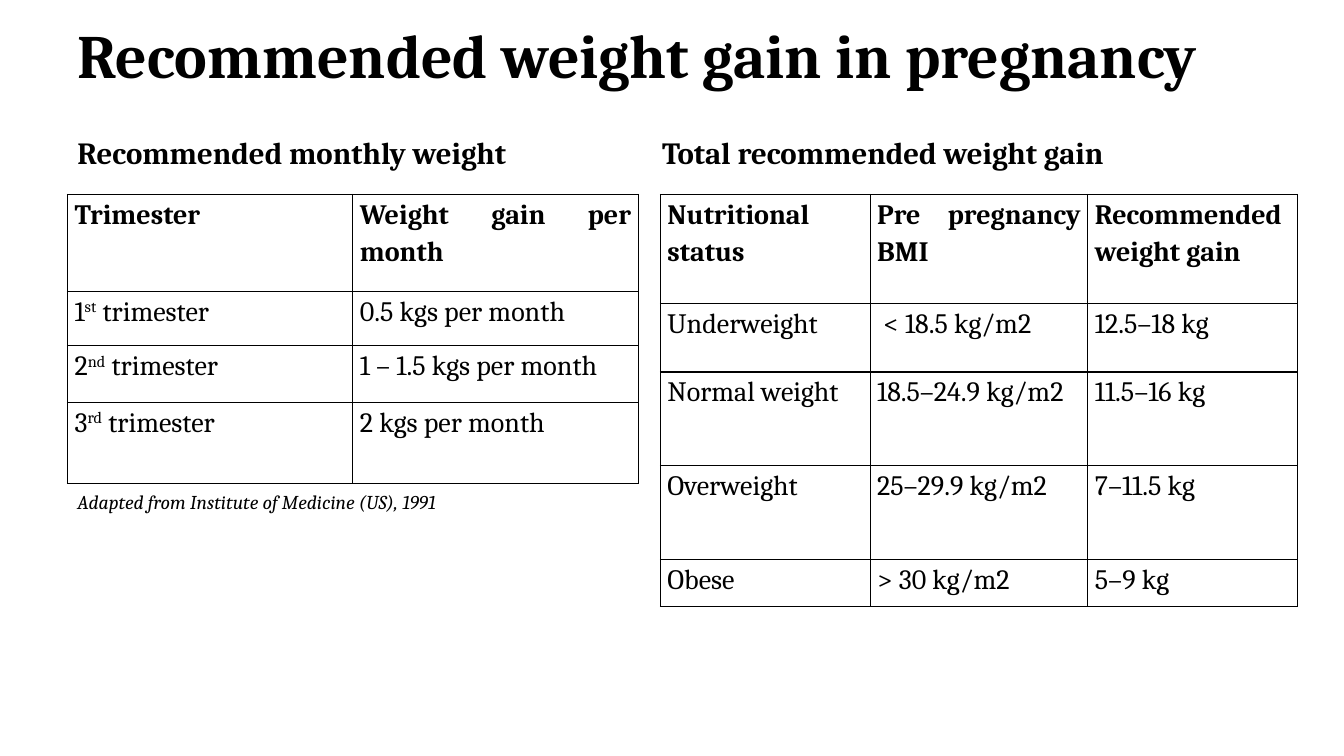
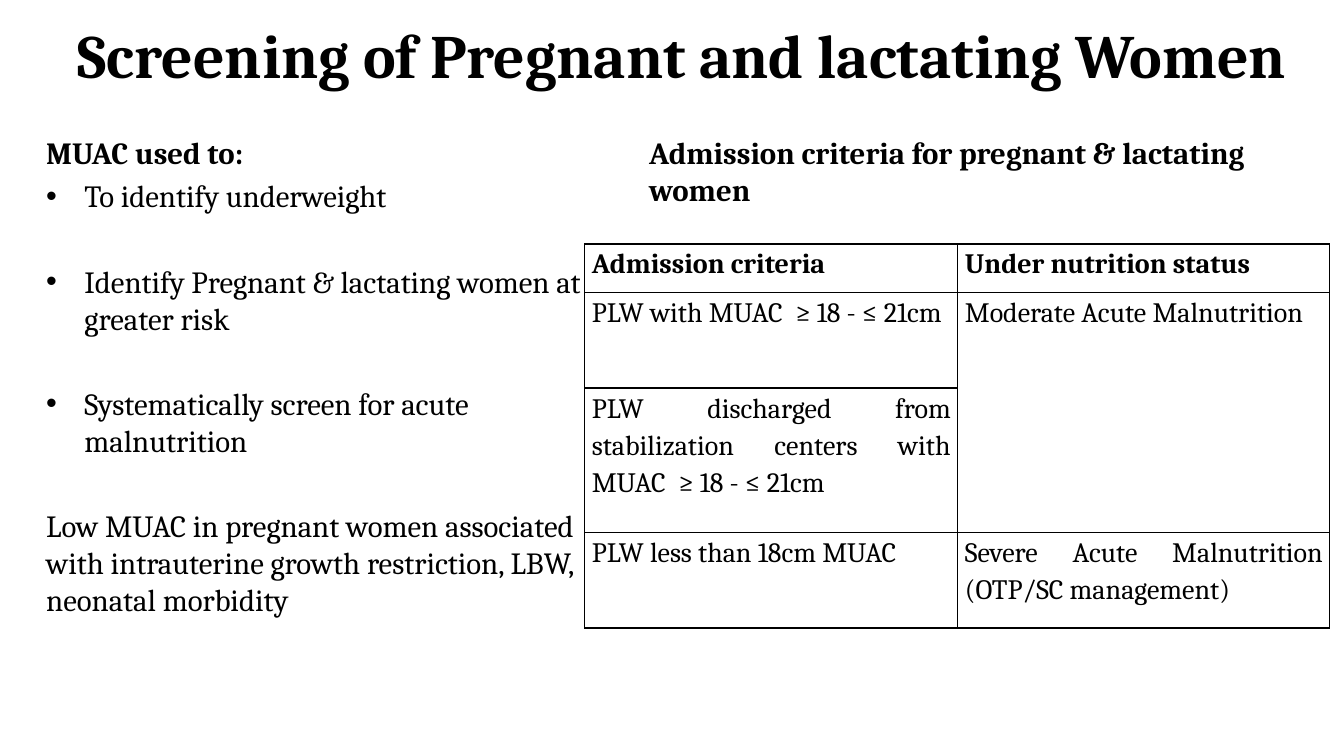
import dataclasses

import pptx
import pptx.dml.color
import pptx.enum.text
import pptx.oxml
import pptx.oxml.ns
import pptx.util

EMU_PER_PX = 9144


def px(length):
    return pptx.util.Emu(length * EMU_PER_PX)


@dataclasses.dataclass(frozen=True)
class Theme:
    font: str = "Cambria"
    ink: str = "000000"
    title_size: int = 44
    body_size: int = 22
    table_size: int = 20
    note_size: int = 14
    table_spacing: float = 1.15
    border_points: int = 1
    bullet_gap: float = 4.4
    wide_gap: float = 34.6
    indent: int = 38
    cell_margin: int = 7


class Deck:
    def __init__(self, theme):
        self.theme = theme
        self.presentation = pptx.Presentation()
        self.presentation.slide_width = px(1333)
        self.presentation.slide_height = px(750)
        self.slide = None

    def add_slide(self, title, title_width):
        self.slide = self.presentation.slides.add_slide(
            self.presentation.slide_layouts[6]
        )
        frame = self.text_frame(67, 21, title_width, 64)
        frame.vertical_anchor = pptx.enum.text.MSO_ANCHOR.MIDDLE
        self.set_text(frame.paragraphs[0], title, self.theme.title_size, bold=True)

    def text_frame(self, left, top, width, height):
        shape = self.slide.shapes.add_textbox(
            px(left), px(top), px(width), px(height)
        )
        shape.text_frame.word_wrap = True
        return shape.text_frame

    def set_text(self, paragraph, text, size, bold=False, italic=False):
        for index, part in enumerate(text.split("^")):
            run = paragraph.add_run()
            run.text = part
            if index % 2:
                run.font._element.set("baseline", "30000")
        font = paragraph.font
        font.name = self.theme.font
        font.size = pptx.util.Pt(size)
        font.bold = bold
        font.italic = italic
        font.color.rgb = pptx.dml.color.RGBColor.from_string(self.theme.ink)

    def heading(self, left, width, text):
        frame = self.text_frame(left, 128, width, 84)
        self.set_text(frame.paragraphs[0], text, self.theme.body_size, bold=True)
        return frame

    def note(self, left, top, width, text):
        frame = self.text_frame(left, top, width, 36)
        self.set_text(frame.paragraphs[0], text, self.theme.note_size, italic=True)

    def bullet_list(self, left, width, heading, bullets, closing):
        frame = self.heading(left, width, heading)
        gap = self.theme.bullet_gap
        for text in bullets:
            paragraph = self.spaced_paragraph(frame, gap)
            self.add_bullet(paragraph)
            self.set_text(paragraph, text, self.theme.body_size)
            gap = self.theme.wide_gap
        paragraph = self.spaced_paragraph(frame, gap)
        self.set_text(paragraph, closing, self.theme.body_size)

    def spaced_paragraph(self, frame, gap):
        paragraph = frame.add_paragraph()
        paragraph.space_before = pptx.util.Pt(gap)
        return paragraph

    def add_bullet(self, paragraph):
        properties = paragraph._p.get_or_add_pPr()
        indent = px(self.theme.indent)
        properties.set("marL", str(indent))
        properties.set("indent", str(-indent))
        namespace = pptx.oxml.ns.nsdecls("a")
        for element in ('buFont {} typeface="Arial"', 'buChar {} char="•"'):
            properties.append(
                pptx.oxml.parse_xml(f"<a:{element.format(namespace)}/>")
            )

    def table(self, left, top, widths, heights, rows, merges=()):
        shape = self.slide.shapes.add_table(
            len(heights), len(widths), px(left), px(top),
            px(sum(widths)), px(sum(heights)),
        )
        table = shape.table
        table.first_row = False
        table.horz_banding = False
        for column, width in zip(table.columns, widths):
            column.width = px(width)
        for row, height in zip(table.rows, heights):
            row.height = px(height)
        for row_index, texts in enumerate(rows):
            for column_index, text in enumerate(texts):
                cell = table.cell(row_index, column_index)
                self.fill_cell(cell, text, bold=row_index == 0)
        for first, last in merges:
            table.cell(*first).merge(table.cell(*last))

    def fill_cell(self, cell, text, bold):
        cell.margin_left = cell.margin_right = px(self.theme.cell_margin)
        cell.margin_top = cell.margin_bottom = 0
        self.add_borders(cell)
        cell.fill.background()
        if text:
            paragraph = cell.text_frame.paragraphs[0]
            paragraph.alignment = pptx.enum.text.PP_ALIGN.JUSTIFY
            paragraph.line_spacing = self.theme.table_spacing
            self.set_text(paragraph, text, self.theme.table_size, bold=bold)

    def add_borders(self, cell):
        properties = cell._tc.get_or_add_tcPr()
        namespace = pptx.oxml.ns.nsdecls("a")
        width = pptx.util.Pt(self.theme.border_points)
        for side in "LRTB":
            properties.append(pptx.oxml.parse_xml(
                f'<a:ln{side} {namespace} w="{width}"><a:solidFill>'
                f'<a:srgbClr val="{self.theme.ink}"/>'
                f"</a:solidFill></a:ln{side}>"
            ))


def add_weight_gain(deck):
    deck.add_slide("Recommended weight gain in pregnancy", 1200)
    deck.heading(67, 589, "Recommended monthly weight")
    deck.heading(647, 664, "Total recommended weight gain")
    deck.table(67, 193, [283, 283], [96, 54, 56, 81], [
        ["Trimester", "Weight gain per month"],
        ["1^st^ trimester", "0.5 kgs per month"],
        ["2^nd^ trimester", "1 – 1.5 kgs per month"],
        ["3^rd^ trimester", "2 kgs per month"],
    ])
    deck.note(67, 481, 589, "Adapted from Institute of Medicine (US), 1991")
    deck.table(655, 193, [208, 216, 208], [108, 68, 93, 93, 47], [
        ["Nutritional status", "Pre pregnancy BMI", "Recommended weight gain"],
        ["Underweight", " < 18.5 kg/m2", "12.5–18 kg"],
        ["Normal weight", "18.5–24.9 kg/m2", "11.5–16 kg"],
        ["Overweight", "25–29.9 kg/m2", "7–11.5 kg"],
        ["Obese", "> 30 kg/m2", "5–9 kg"],
    ])


def add_screening(deck):
    deck.add_slide("Screening of Pregnant and lactating Women", 1252)
    deck.heading(634, 633, "Admission criteria for pregnant & lactating women")
    deck.bullet_list(
        36, 560, "MUAC used to:",
        [
            "To identify underweight",
            "Identify Pregnant & lactating women at greater risk",
            "Systematically screen for acute malnutrition",
        ],
        "Low MUAC in pregnant women associated with intrauterine growth "
        "restriction, LBW, neonatal morbidity",
    )
    deck.table(580, 242, [370, 369], [48, 95, 143, 95], [
        ["Admission criteria", "Under nutrition status"],
        ["PLW with MUAC  ≥ 18 - ≤ 21cm", "Moderate Acute Malnutrition"],
        ["PLW discharged from stabilization centers with "
         "MUAC  ≥ 18 - ≤ 21cm", ""],
        ["PLW less than 18cm MUAC",
         "Severe Acute Malnutrition (OTP/SC management)"],
    ], merges=[((1, 1), (2, 1))])


def main():
    deck = Deck(Theme())
    add_weight_gain(deck)
    add_screening(deck)
    deck.presentation.save("out.pptx")


if __name__ == "__main__":
    main()
